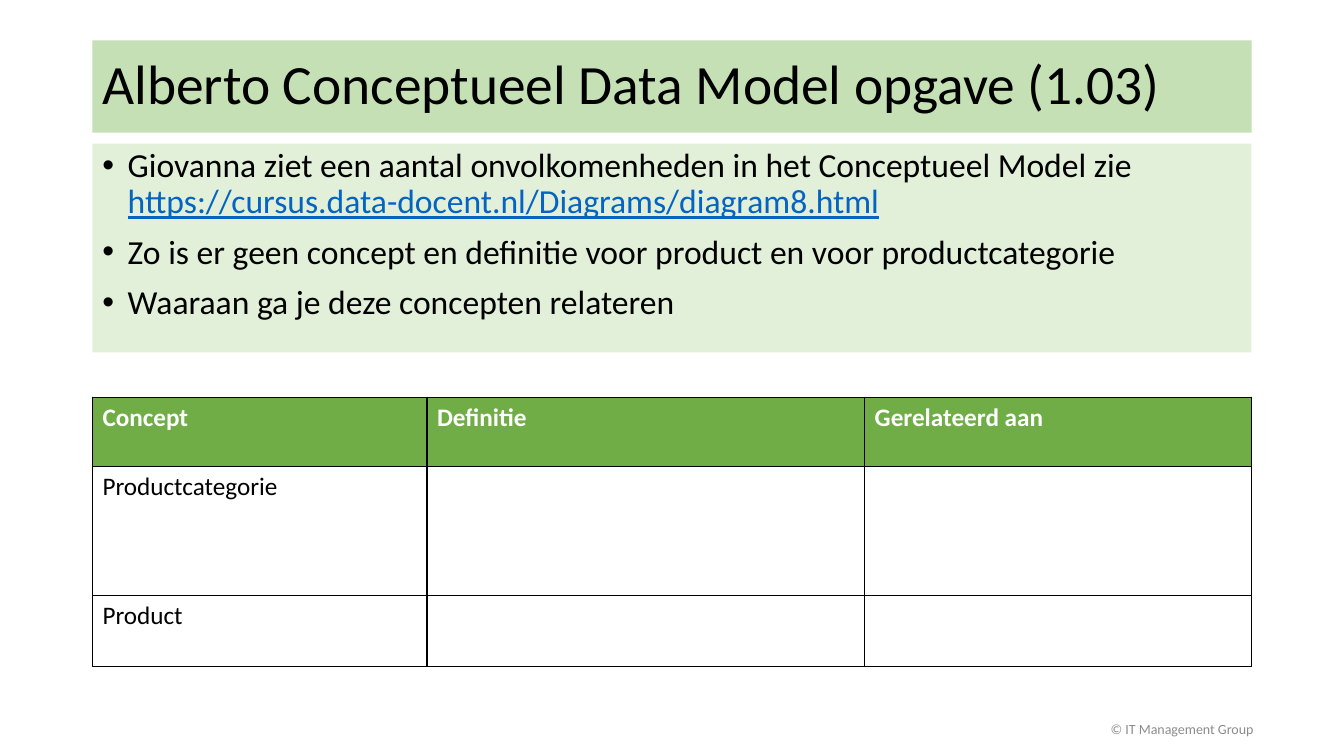
from lxml import etree
from pptx import Presentation
from pptx.dml.color import RGBColor
from pptx.enum.text import MSO_ANCHOR, MSO_AUTO_SIZE, PP_ALIGN
from pptx.oxml.ns import qn
from pptx.util import Cm, Pt

LEFT = PP_ALIGN.LEFT
TOP, MIDDLE = MSO_ANCHOR.TOP, MSO_ANCHOR.MIDDLE
NO_AUTOFIT = MSO_AUTO_SIZE.NONE
TITLE_ONLY = 5
FONT = "Calibri"
COLORS = {
    "title_fill": "C5E0B4",
    "body_fill": "E2F0D9",
    "header_fill": "70AD47",
    "white": "FFFFFF",
    "black": "000000",
    "link": "0563C1",
    "footer": "8C8C8C",
}

BULLETS = [
    [("Giovanna ziet een aantal onvolkomenheden in het Conceptueel Model zie ", {}),
     ("https://cursus.data-docent.nl/Diagrams/diagram8.html",
      {"color": "link", "underline": True})],
    [("Zo is er geen concept en definitie voor product en voor productcategorie", {})],
    [("Waaraan ga je deze concepten relateren", {})],
]
ROWS = [
    ["Concept", "Definitie", "Gerelateerd aan"],
    ["Productcategorie", "", ""],
    ["Product", "", ""],
]
COLUMN_WIDTHS = [8.43, 11.03, 9.75]
ROW_HEIGHTS = [1.74, 3.26, 1.79]


def rgb(name):
    return RGBColor.from_string(COLORS[name])


def add_text(para, text, size=18, color="black", bold=False, underline=False):
    span = para.add_run()
    span.text = text
    font = span.font
    font.name, font.size = FONT, Pt(size)
    font.bold, font.underline = bold, underline
    font.color.rgb = rgb(color)


def place(shape, box, anchor, fill=None):
    """Position a text shape and return its prepared text frame."""
    shape.left, shape.top, shape.width, shape.height = map(Cm, box)
    if fill:
        shape.fill.solid()
        shape.fill.fore_color.rgb = rgb(fill)
    frame = shape.text_frame
    frame.word_wrap = True
    frame.auto_size = NO_AUTOFIT
    frame.vertical_anchor = anchor
    return frame


def add_bullet(para):
    properties = para._p.get_or_add_pPr()
    properties.set("marL", str(Cm(0.64)))
    properties.set("indent", str(-Cm(0.64)))
    etree.SubElement(properties, qn("a:buFont"), typeface="Arial")
    etree.SubElement(properties, qn("a:buChar"), char="•")


def add_borders(cell, color="black", width=1):
    properties = cell._tc.get_or_add_tcPr()
    for index, side in enumerate(("lnL", "lnR", "lnT", "lnB")):
        line = etree.Element(qn(f"a:{side}"), w=str(Pt(width)))
        fill = etree.SubElement(line, qn("a:solidFill"))
        etree.SubElement(fill, qn("a:srgbClr"), val=COLORS[color])
        properties.insert(index, line)


def build_title(page, box):
    frame = place(page.shapes.title, box, MIDDLE, "title_fill")
    para = frame.paragraphs[0]
    para.alignment = LEFT
    para.line_spacing = 0.9
    add_text(para, "Alberto Conceptueel Data Model opgave (1.03)", size=39.6)


def build_assignment(page, box):
    shape = page.shapes.add_textbox(*map(Cm, box))
    frame = place(shape, box, TOP, "body_fill")
    for index, spans in enumerate(BULLETS):
        para = frame.add_paragraph() if index else frame.paragraphs[0]
        add_bullet(para)
        para.line_spacing = 0.9
        if index:
            para.space_before = Pt(10)
        for text, style in spans:
            add_text(para, text, size=24, **style)


def build_concept_table(page, box):
    table = page.shapes.add_table(len(ROWS), len(ROWS[0]), *map(Cm, box)).table
    table.horz_banding = False
    for column, width in zip(table.columns, COLUMN_WIDTHS):
        column.width = Cm(width)
    for row, height, texts in zip(table.rows, ROW_HEIGHTS, ROWS):
        row.height = Cm(height)
        header = texts is ROWS[0]
        for cell, text in zip(row.cells, texts):
            cell.fill.solid()
            cell.fill.fore_color.rgb = rgb("header_fill" if header else "white")
            add_borders(cell)
            if text:
                add_text(cell.text_frame.paragraphs[0], text, bold=header,
                         color="white" if header else "black")


def build_footer(page, box):
    frame = place(page.shapes.add_textbox(*map(Cm, box)), box, MIDDLE)
    add_text(frame.paragraphs[0], "© IT Management Group", size=10, color="footer")


def main():
    deck = Presentation()
    deck.slide_width, deck.slide_height = Cm(33.87), Cm(19.05)
    page = deck.slides.add_slide(deck.slide_layouts[TITLE_ONLY])
    left, width = 2.33, 29.21
    build_title(page, (left, 1.02, width, 2.32))
    build_assignment(page, (left, 3.62, width, 5.26))
    build_concept_table(page, (left, 10.01, width, sum(ROW_HEIGHTS)))
    build_footer(page, (27.74, 17.88, 4.72, 0.97))
    deck.save("out.pptx")


if __name__ == "__main__":
    main()
